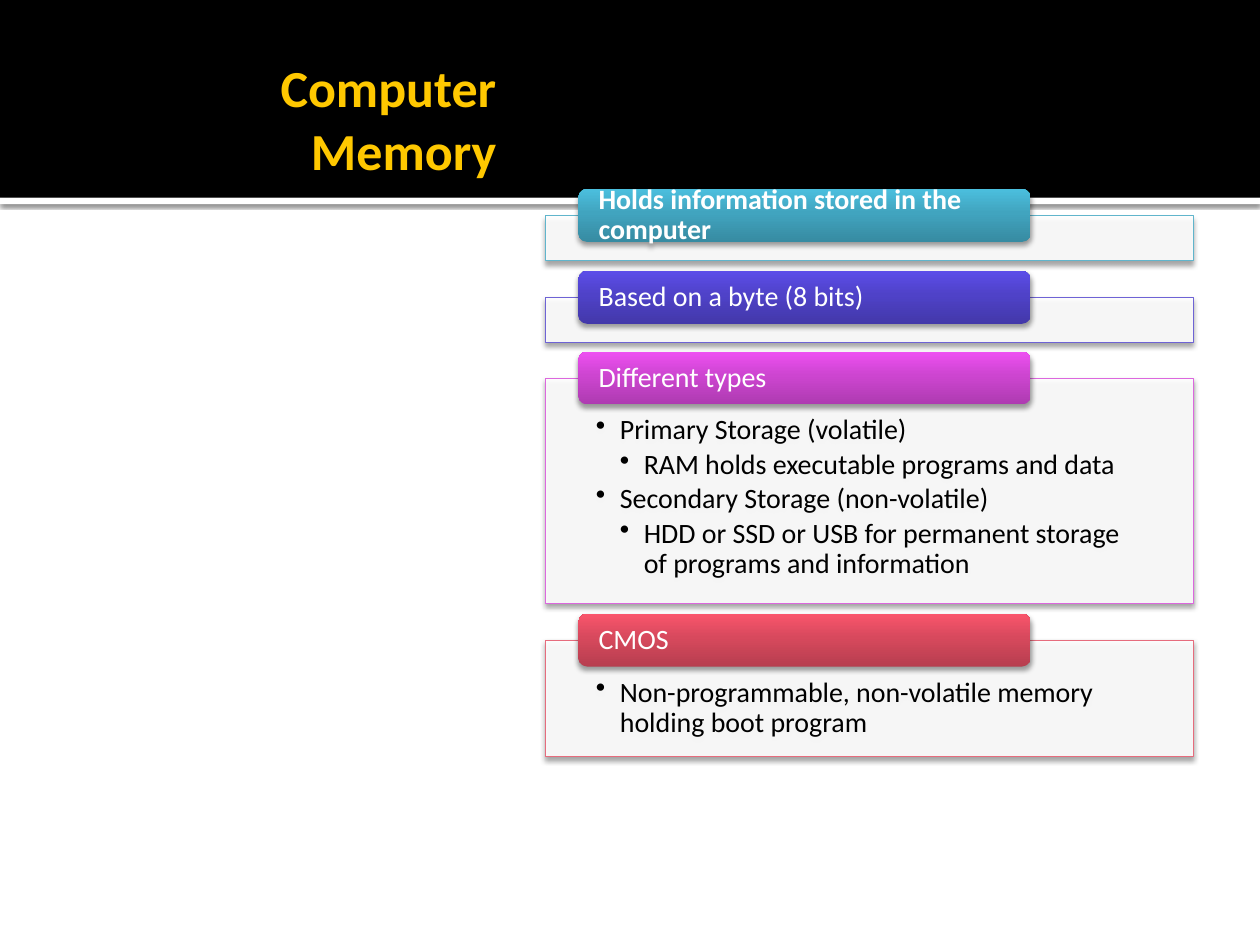
import copy

import lxml.etree
import pptx
import pptx.dml.color
import pptx.enum.shapes
import pptx.enum.text
import pptx.oxml.ns
import pptx.util

Inches = pptx.util.Inches
Pt = pptx.util.Pt
RGBColor = pptx.dml.color.RGBColor
Shapes = pptx.enum.shapes.MSO_SHAPE
Anchor = pptx.enum.text.MSO_ANCHOR
Align = pptx.enum.text.PP_ALIGN
qn = pptx.oxml.ns.qn

WHITE = RGBColor(0xFF, 0xFF, 0xFF)
BLACK = RGBColor(0x00, 0x00, 0x00)
GOLD = RGBColor(0xFF, 0xC8, 0x00)
TEAL = RGBColor(0x60, 0xB5, 0xCC)
TEAL_SHADES = (RGBColor(0x37, 0x8B, 0xA2), RGBColor(0x41, 0xA4, 0xBF), RGBColor(0x4B, 0xBF, 0xDE))
INDIGO = RGBColor(0x6E, 0x63, 0xD5)
INDIGO_SHADES = (RGBColor(0x43, 0x38, 0xAA), RGBColor(0x4F, 0x42, 0xC8), RGBColor(0x5C, 0x4D, 0xE9))
MAGENTA = RGBColor(0xDC, 0x67, 0xDE)
MAGENTA_SHADES = (RGBColor(0xAE, 0x3B, 0xB1), RGBColor(0xCD, 0x45, 0xD0), RGBColor(0xEE, 0x50, 0xF2))
RED = RGBColor(0xE6, 0x6C, 0x7D)
RED_SHADES = (RGBColor(0xB7, 0x3E, 0x4F), RGBColor(0xD7, 0x49, 0x5D), RGBColor(0xFA, 0x55, 0x6C))

SHADE_POSITIONS = (0, 0.55, 1)
PANEL_LEFT, PANEL_WIDTH = 4.33, 5.14
HEADER_LEFT, HEADER_WIDTH, HEADER_HEIGHT = 4.59, 3.59, 0.42
BULLET_INDENT = 0.19

SECTIONS = [
    (1.71, 0.36, TEAL, TEAL_SHADES, "Holds information stored in the computer", True, []),
    (2.36, 0.36, INDIGO, INDIGO_SHADES, "Based on a byte (8 bits)", False, []),
    (3, 1.79, MAGENTA, MAGENTA_SHADES, "Different types", False, [
        (1, "Primary Storage (volatile)"),
        (2, "RAM holds executable programs and data"),
        (1, "Secondary Storage (non-volatile)"),
        (2, "HDD or SSD or USB for permanent storage of programs and information"),
    ]),
    (5.08, 0.92, RED, RED_SHADES, "CMOS", False, [
        (1, "Non-programmable, non-volatile memory holding boot program"),
    ]),
]


class SlideBuilder:
    font_name = "Calibri"
    body_size = 16

    def __init__(self, slide):
        self.slide = slide

    def add_block(self, kind, left, top, width, height):
        shape = self.slide.shapes.add_shape(
            kind, Inches(left), Inches(top), Inches(width), Inches(height))
        shape.shadow.inherit = False
        shape.line.fill.background()
        return shape

    def add_band(self, top, height, color):
        shape = self.add_block(Shapes.RECTANGLE, 0, top, 10, height)
        shape.fill.solid()
        shape.fill.fore_color.rgb = color
        return shape

    def add_shadow(self, shape, blur, distance, opacity):
        effects = shape.element.spPr.find(qn("a:effectLst"))
        shadow = lxml.etree.SubElement(
            effects, qn("a:outerShdw"), blurRad=str(Pt(blur)), dist=str(Pt(distance)),
            dir="5400000", algn="ctr", rotWithShape="0")
        color = lxml.etree.SubElement(shadow, qn("a:srgbClr"), val=str(BLACK))
        lxml.etree.SubElement(color, qn("a:alpha"), val=str(opacity * 1000))

    def set_insets(self, text_frame, left, top, right, bottom):
        text_frame.margin_left, text_frame.margin_top = Inches(left), Inches(top)
        text_frame.margin_right, text_frame.margin_bottom = Inches(right), Inches(bottom)
        text_frame.word_wrap = True
        text_frame.auto_size = pptx.enum.text.MSO_AUTO_SIZE.NONE

    def format_paragraph(self, paragraph, size, color, bold=False, align=Align.LEFT):
        paragraph.alignment = align
        for run in paragraph.runs:
            run.font.name = self.font_name
            run.font.size = Pt(size)
            run.font.bold = bold
            run.font.color.rgb = color

    def add_title(self, text):
        title = self.slide.shapes.title
        title.left, title.top = Inches(0.92), Inches(0.38)
        title.width, title.height = Inches(3.07), Inches(1.12)
        title.element.getparent().append(title.element)
        title.text_frame.text = text
        title.text_frame.vertical_anchor = Anchor.MIDDLE
        self.set_insets(title.text_frame, 0.1, 0.05, 0.05, 0.05)
        self.format_paragraph(title.text_frame.paragraphs[0], 29.7, GOLD, True, Align.RIGHT)

    def add_panel(self, top, height, color, bullets):
        panel = self.add_block(Shapes.RECTANGLE, PANEL_LEFT, top, PANEL_WIDTH, height)
        panel.fill.solid()
        panel.fill.fore_color.rgb = WHITE
        fill_color = panel.element.spPr.find(qn("a:solidFill")).find(qn("a:srgbClr"))
        lxml.etree.SubElement(fill_color, qn("a:alpha"), val="90000")
        panel.line.color.rgb = color
        panel.line.width = Pt(0.5)
        self.add_shadow(panel, 3.1, 2, 38)
        if bullets:
            self.add_bullets(panel.text_frame, bullets)

    def add_bullets(self, text_frame, bullets):
        self.set_insets(text_frame, 0.4, 0.3, 0.4, 0.12)
        text_frame.vertical_anchor = Anchor.TOP
        text_frame.text = "\n".join(text for level, text in bullets)
        for paragraph, (level, text) in zip(text_frame.paragraphs, bullets):
            self.format_paragraph(paragraph, self.body_size, BLACK)
            paragraph.level = level
            paragraph.line_spacing = 0.9
            paragraph.space_after = Pt(2.4)
            properties = paragraph._p.get_or_add_pPr()
            properties.set("marL", str(Inches(level * BULLET_INDENT)))
            properties.set("indent", str(-Inches(BULLET_INDENT)))
            lxml.etree.SubElement(properties, qn("a:buChar"), char="•")

    def add_header(self, panel_top, shades, text, bold):
        header = self.add_block(Shapes.ROUNDED_RECTANGLE, HEADER_LEFT,
                                panel_top - HEADER_HEIGHT / 2, HEADER_WIDTH, HEADER_HEIGHT)
        header.fill.gradient()
        header.fill.gradient_angle = 90
        first_stop = header.element.spPr.find(qn("a:gradFill")).find(qn("a:gsLst"))[0]
        first_stop.addnext(copy.deepcopy(first_stop))
        for stop, position, shade in zip(header.fill.gradient_stops, SHADE_POSITIONS, shades):
            stop.position = position
            stop.color.rgb = shade
        self.add_shadow(header, 3.1, 2, 38)
        self.set_insets(header.text_frame, 0.14, 0, 0.14, 0)
        header.text_frame.vertical_anchor = Anchor.MIDDLE
        header.text_frame.text = text
        paragraph = header.text_frame.paragraphs[0]
        paragraph.line_spacing = 0.9
        self.format_paragraph(paragraph, self.body_size, WHITE, bold)


def main():
    presentation = pptx.Presentation()
    presentation.slide_width, presentation.slide_height = Inches(10), Inches(7.5)
    builder = SlideBuilder(presentation.slides.add_slide(presentation.slide_layouts[5]))
    divider = builder.add_band(1.57, 0.05, WHITE)
    builder.add_shadow(divider, 2.5, 0.8, 60)
    builder.add_band(0, 1.57, BLACK)
    builder.add_title("Computer Memory")
    for top, height, color, shades, heading, bold, bullets in SECTIONS:
        builder.add_panel(top, height, color, bullets)
        builder.add_header(top, shades, heading, bold)
    presentation.save("out.pptx")


if __name__ == "__main__":
    main()
